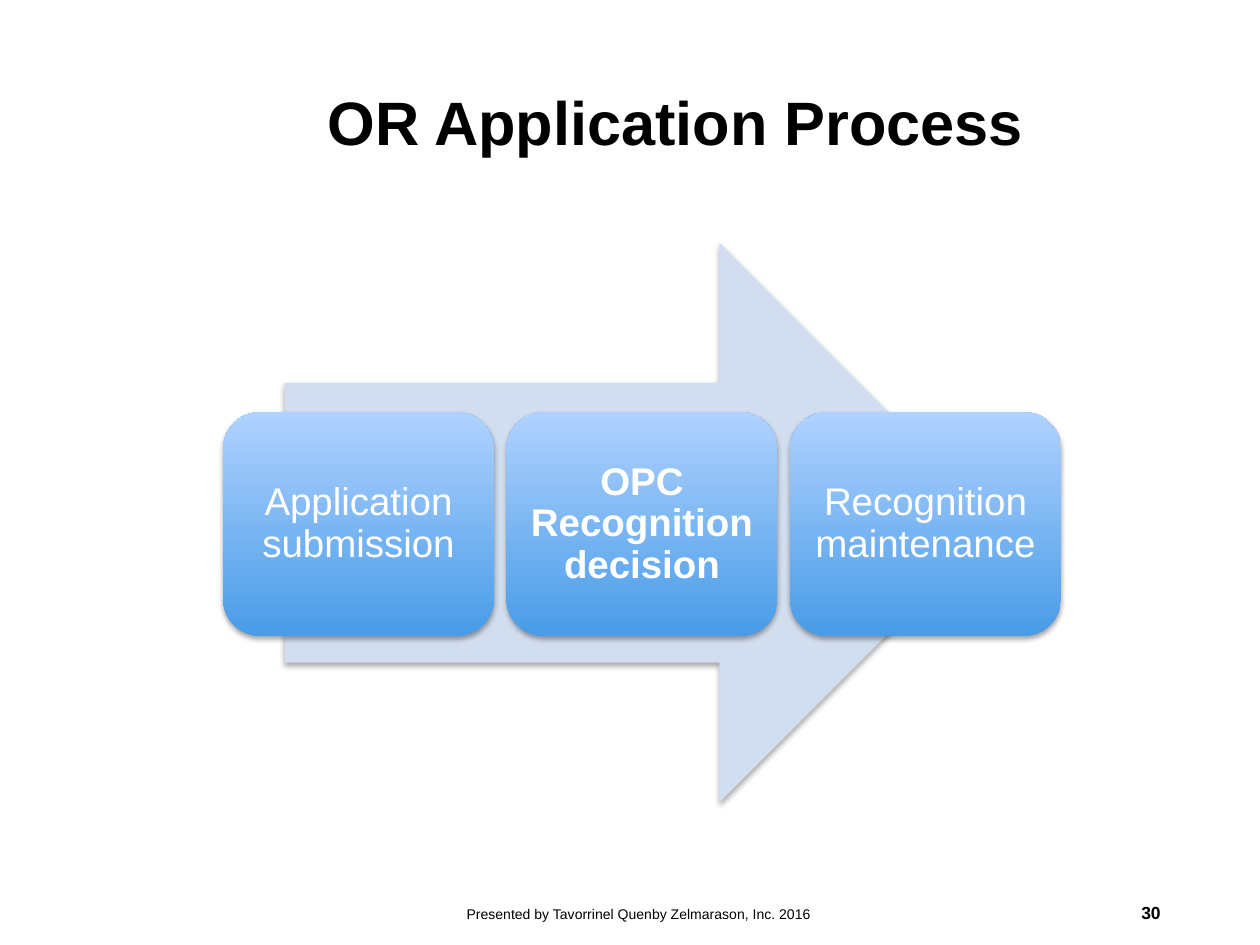
from lxml import etree
from pptx import Presentation
from pptx.dml.color import RGBColor
from pptx.enum.shapes import MSO_SHAPE
from pptx.enum.text import MSO_ANCHOR, PP_ALIGN
from pptx.oxml.ns import qn
from pptx.util import Inches, Pt

ARROW, ROUNDED = MSO_SHAPE.RIGHT_ARROW, MSO_SHAPE.ROUNDED_RECTANGLE
LEFT, CENTER, RIGHT = PP_ALIGN.LEFT, PP_ALIGN.CENTER, PP_ALIGN.RIGHT
MIDDLE = MSO_ANCHOR.MIDDLE

BLACK = RGBColor(0x00, 0x00, 0x00)
WHITE = RGBColor(0xFF, 0xFF, 0xFF)
PALE_BLUE = RGBColor(0xD2, 0xDE, 0xEF)
STEP_BOTTOM = RGBColor(0x49, 0x9C, 0xE7)
STEP_TOP = RGBColor(0xB0, 0xD2, 0xFF)

COLUMNS, ROWS = 100, 75
STEPS = [
    ("Application submission", False),
    ("OPC Recognition decision", True),
    ("Recognition maintenance", False),
]
STEP_LEFT, STEP_TOP_ROW, STEP_PITCH = 17.7, 32.7, 22.5
STEP_WIDTH, STEP_HEIGHT = 21.5, 17.8


def write(shape, text, size, color=BLACK, bold=False, align=LEFT,
          spacing=1.0, insets=(0.1, 0.1, 0.1, 0.1)):
    """Fill a shape with one paragraph; insets are left, top, right, bottom in inches."""
    frame = shape.text_frame
    frame.word_wrap = True
    frame.vertical_anchor = MIDDLE
    (frame.margin_left, frame.margin_top,
     frame.margin_right, frame.margin_bottom) = map(Inches, insets)
    paragraph = frame.paragraphs[0]
    paragraph.alignment = align
    paragraph.line_spacing = spacing
    run = paragraph.add_run()
    run.text = text
    run.font.name = "Arial"
    run.font.size = Pt(size)
    run.font.bold = bold
    run.font.color.rgb = color


def add_soft_shadow(shape):
    shape.shadow.inherit = False
    effects = shape._element.spPr.find(qn("a:effectLst"))
    shadow = etree.SubElement(effects, qn("a:outerShdw"), blurRad=str(Pt(3.1)),
                              dist=str(Pt(1.8)), dir="5400000", rotWithShape="0")
    color = etree.SubElement(shadow, qn("a:srgbClr"), val="000000")
    etree.SubElement(color, qn("a:alpha"), val="35000")


class SlideBuilder:
    """Places elements on a slide by grid columns and rows."""

    def __init__(self, presentation):
        self.column = presentation.slide_width / COLUMNS
        self.row = presentation.slide_height / ROWS
        self.slide = presentation.slides.add_slide(presentation.slide_layouts[5])

    def area(self, left, top, width, height):
        return (round(left * self.column), round(top * self.row),
                round(width * self.column), round(height * self.row))

    def title(self, text, *area, **style):
        title = self.slide.shapes.title
        title.left, title.top, title.width, title.height = self.area(*area)
        write(title, text, **style)

    def text(self, text, *area, **style):
        write(self.slide.shapes.add_textbox(*self.area(*area)), text, **style)

    def shape(self, kind, *area):
        shape = self.slide.shapes.add_shape(kind, *self.area(*area))
        shape.line.fill.background()
        add_soft_shadow(shape)
        return shape

    def arrow(self, *area):
        arrow = self.shape(ARROW, *area)
        arrow.fill.solid()
        arrow.fill.fore_color.rgb = PALE_BLUE

    def step(self, text, bold, *area):
        step = self.shape(ROUNDED, *area)
        step.fill.gradient()
        step.fill.gradient_angle = 90
        for stop, color in zip(step.fill.gradient_stops, (STEP_BOTTOM, STEP_TOP)):
            stop.color.rgb = color
        write(step, text, size=22, color=WHITE, bold=bold, align=CENTER,
              spacing=0.9, insets=(0.09, 0.09, 0.09, 0.09))


def main():
    presentation = Presentation()
    presentation.slide_width, presentation.slide_height = Inches(10), Inches(7.5)
    builder = SlideBuilder(presentation)

    builder.title("OR Application Process", 25, 2.7, 71.4, 14.5,
                  size=35, bold=True, spacing=0.9)
    builder.arrow(22.6, 19.3, 56.7, 44.4)
    for index, (label, bold) in enumerate(STEPS):
        builder.step(label, bold, STEP_LEFT + index * STEP_PITCH, STEP_TOP_ROW,
                     STEP_WIDTH, STEP_HEIGHT)
    builder.text("Presented by Tavorrinel Quenby Zelmarason, Inc. 2016",
                 30, 69, 40, 7.1, size=8, align=CENTER, insets=(0.24, 0.1, 0.1, 0.1))
    builder.text("30", 70.6, 70.4, 22.5, 4, size=10, bold=True, align=RIGHT,
                 insets=(0.1, 0.05, 0.1, 0.05))

    presentation.save("out.pptx")


if __name__ == "__main__":
    main()
